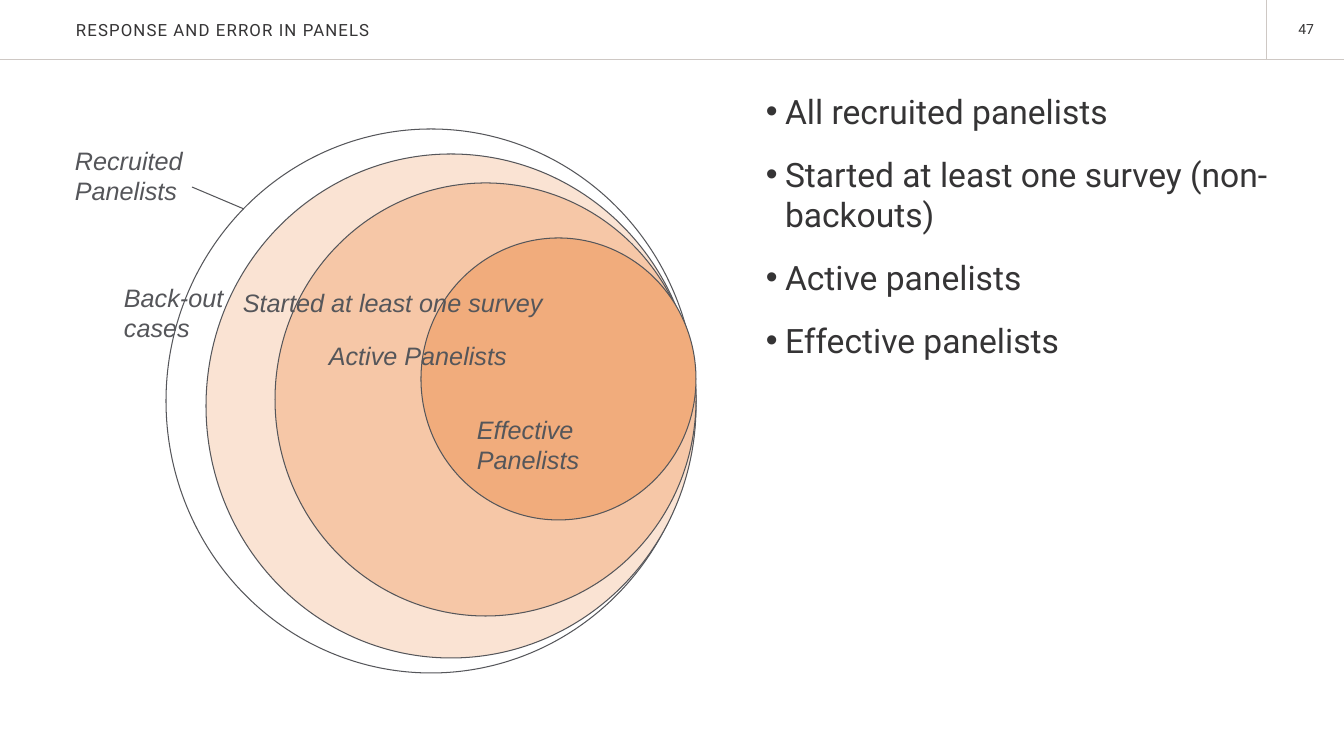
from lxml.etree import SubElement
from pptx import Presentation
from pptx.dml.color import RGBColor
from pptx.enum.shapes import MSO_CONNECTOR, MSO_SHAPE
from pptx.enum.text import MSO_ANCHOR, MSO_AUTO_SIZE, PP_ALIGN
from pptx.oxml.ns import qn
from pptx.util import Emu, Pt

COLORS = {"ink": "353435", "grey": "55565A", "rule": "CEC8C4", "recruited": "FFFFFF",
          "started": "FAE3D3", "active": "F6C7A7", "effective": "F1AC7C"}

TITLE = "RESPONSE AND ERROR IN PANELS"
PAGE_NUMBER = "47"
BULLETS = ["All recruited panelists", "Started at least one survey (non-backouts)",
           "Active panelists", "Effective panelists"]

# Boxes are left, top, width, height in px
CIRCLES = [("recruited", (166, 129, 530, 544)), ("started", (206, 154, 490, 504)),
           ("active", (275, 183, 421, 433)), ("effective", (421, 238, 275, 282))]
LABELS = [("Recruited Panelists", (65, 140, 147, 72)),
          ("Effective Panelists", (467, 409, 206, 72)),
          ("Started at least one survey", (233, 282, 323, 40)),
          ("Active Panelists", (319, 335, 357, 40)),
          ("Back-out cases", (114, 277, 133, 72))]
# Lines are start x, start y, end x, end y in px
HEADER_RULES = [(0, 59, 1344, 59), (1266, 0, 1266, 59)]
LEADER = (244, 209, 192, 187)

PX = 9071.43  # EMU in one px, at 100.8 px to the inch


def px(*lengths):
    return [Emu(round(length * PX)) for length in lengths]


def color(name):
    return RGBColor.from_string(COLORS[name])


def style(para, size, font_name, color_name, italic=False):
    para.font.size, para.font.name, para.font.italic = Pt(size), font_name, italic
    para.font.color.rgb = color(color_name)


def place(shape, box):
    shape.left, shape.top, shape.width, shape.height = px(*box)


def add_line(ends, color_name, width):
    line = page.shapes.add_connector(MSO_CONNECTOR.STRAIGHT, *px(*ends))
    line.line.color.rgb, line.line.width = color(color_name), Pt(width)
    SubElement(line._element.spPr, qn("a:effectLst"))


def add_text(text, box):
    frame = page.shapes.add_textbox(*px(*box)).text_frame
    frame.word_wrap = True
    frame.text = text
    return frame.paragraphs[0]


deck = Presentation()
deck.slide_width, deck.slide_height = px(1344, 756)
page = deck.slides.add_slide(deck.slide_layouts[1])

# Header: title, rules and page number
title = page.shapes.title
place(title, (76, 0, 937, 60))
frame = title.text_frame
frame.text = TITLE
frame.auto_size, frame.word_wrap = MSO_AUTO_SIZE.NONE, True
frame.vertical_anchor = MSO_ANCHOR.MIDDLE
frame.margin_left = frame.margin_right = frame.margin_top = frame.margin_bottom = 0
frame.paragraphs[0].alignment = PP_ALIGN.LEFT
style(frame.paragraphs[0], 12, "Roboto", "ink")
frame.paragraphs[0].font._element.set("spc", "80")

for ends in HEADER_RULES:
    add_line(ends, "rule", 0.65)
number = add_text(PAGE_NUMBER, (1274, 16, 50, 27))
number.alignment = PP_ALIGN.RIGHT
style(number, 10, "Roboto", "ink")

# Bulleted list
body = page.placeholders[1]
place(body, (766, 86, 512, 631))
frame = body.text_frame
frame.text = "\n".join(BULLETS)
frame.auto_size, frame.word_wrap = MSO_AUTO_SIZE.NONE, True
frame.margin_left = frame.margin_right = 0
frame.margin_top = frame.margin_bottom = px(5)[0]
indent = px(19)[0]
for index, para in enumerate(frame.paragraphs):
    properties = para._p.get_or_add_pPr()
    properties.set("marL", str(indent))
    properties.set("indent", str(-indent))
    SubElement(properties, qn("a:buFont"), typeface="Arial")
    SubElement(properties, qn("a:buChar"), char="•")
    para.space_before = Pt(10 if index else 0)
    para.space_after = Pt(6)
    style(para, 24, "Roboto", "ink")

# Nested circles, largest first
for name, box in CIRCLES:
    circle = page.shapes.add_shape(MSO_SHAPE.FLOWCHART_CONNECTOR, *px(*box))
    circle.shadow.inherit = False
    circle.fill.solid()
    circle.fill.fore_color.rgb = color(name)
    circle.line.color.rgb, circle.line.width = color("grey"), Pt(0.75)

# Labels and the leader line
add_line(LEADER, "grey", 0.75)
for text, box in LABELS:
    style(add_text(text, box), 18, "Arial", "grey", italic=True)

deck.save("out.pptx")
